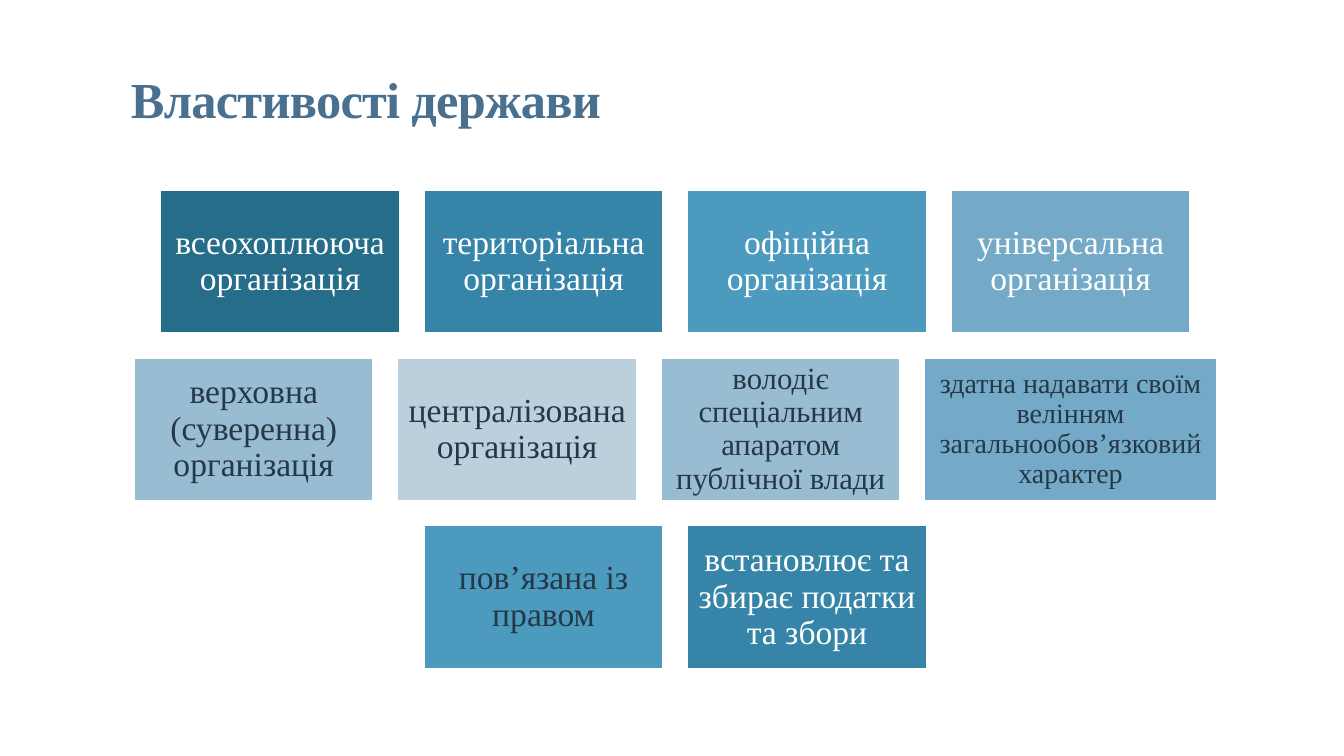
from dataclasses import dataclass

from pptx import Presentation
from pptx.dml.color import RGBColor
from pptx.enum.shapes import MSO_SHAPE
from pptx.enum.text import MSO_ANCHOR, PP_ALIGN
from pptx.util import Cm, Pt

FONT = "Times New Roman"
COLOURS = {
    "title": "4A7090",
    "white": "FFFFFF",
    "dark": "253848",
    "deep": "266D8A",
    "teal": "3685A9",
    "blue": "4D9ABF",
    "sky": "74AAC7",
    "mist": "98BCD1",
    "pale": "BBCFDD",
}

# Card grid, in centimetres: every row is centred on the same axis
CENTRE, TOP = 17.02, 4.78
CARD_WIDTH, CARD_HEIGHT = 6.04, 3.62
GAP, ROW_STEP = 0.6, 4.23


@dataclass
class Card:
    text: str
    fill: str
    colour: str = "white"
    size: int = 24
    width: float = CARD_WIDTH
    inset: float = 0.25


ROWS = [
    [
        Card("всеохоплююча організація", "deep"),
        Card("територіальна організація", "teal"),
        Card("офіційна організація", "blue"),
        Card("універсальна організація", "sky"),
    ],
    [
        Card("верховна (суверенна) організація", "mist", "dark"),
        Card("централізована організація", "pale", "dark"),
        Card("володіє спеціальним апаратом публічної влади", "mist", "dark",
             size=22, inset=0.23),
        Card("здатна надавати своїм велінням загальнообов’язковий характер",
             "sky", "dark", size=20, width=7.37, inset=0.2),
    ],
    [
        Card("пов’язана із правом", "blue", "dark"),
        Card("встановлює та збирає податки та збори", "teal"),
    ],
]


def colour_of(name: str) -> RGBColor:
    return RGBColor.from_string(COLOURS[name])


def set_values(target, values: dict) -> None:
    for name, value in values.items():
        setattr(target, name, value)


def write_text(box, text: str, colour: str, frame_format: dict,
               para_format: dict, font_format: dict):
    """Fill a box with one formatted paragraph and return its run."""
    frame = box.text_frame
    set_values(frame, {"word_wrap": True, **frame_format})
    para = frame.paragraphs[0]
    set_values(para, para_format)
    span = para.add_run()
    span.text = text
    set_values(span.font, {"name": FONT, **font_format})
    span.font.color.rgb = colour_of(colour)
    return span


def draw_title(page, text: str) -> None:
    box = page.shapes.add_textbox(Cm(3.05), Cm(1.32), Cm(27.94), Cm(2.06))
    span = write_text(
        box, text, "title",
        {"vertical_anchor": MSO_ANCHOR.BOTTOM},
        {"line_spacing": 0.85},
        {"size": Pt(36), "bold": True},
    )
    span._r.get_or_add_rPr().set("spc", "-50")


def draw_card(page, card: Card, left: float, top: float) -> None:
    box = page.shapes.add_shape(MSO_SHAPE.RECTANGLE, Cm(left), Cm(top),
                                Cm(card.width), Cm(CARD_HEIGHT))
    box.shadow.inherit = False
    box.fill.solid()
    box.fill.fore_color.rgb = colour_of(card.fill)
    box.line.color.rgb = colour_of("white")
    box.line.width = Pt(1.5)
    sides = ("left", "top", "right", "bottom")
    margins = {f"margin_{side}": Cm(card.inset) for side in sides}
    write_text(
        box, card.text, card.colour,
        {"vertical_anchor": MSO_ANCHOR.MIDDLE, **margins},
        {"alignment": PP_ALIGN.CENTER, "line_spacing": 0.9},
        {"size": Pt(card.size)},
    )


def draw_row(page, cards: list[Card], top: float) -> None:
    total = sum(card.width for card in cards) + GAP * (len(cards) - 1)
    left = CENTRE - total / 2
    for card in cards:
        draw_card(page, card, left, top)
        left += card.width + GAP


def main() -> None:
    deck = Presentation()
    set_values(deck, {"slide_width": Cm(33.87), "slide_height": Cm(19.05)})
    page = deck.slides.add_slide(deck.slide_layouts[6])
    draw_title(page, "Властивості держави")
    for index, cards in enumerate(ROWS):
        draw_row(page, cards, TOP + index * ROW_STEP)
    deck.save("out.pptx")


if __name__ == "__main__":
    main()
